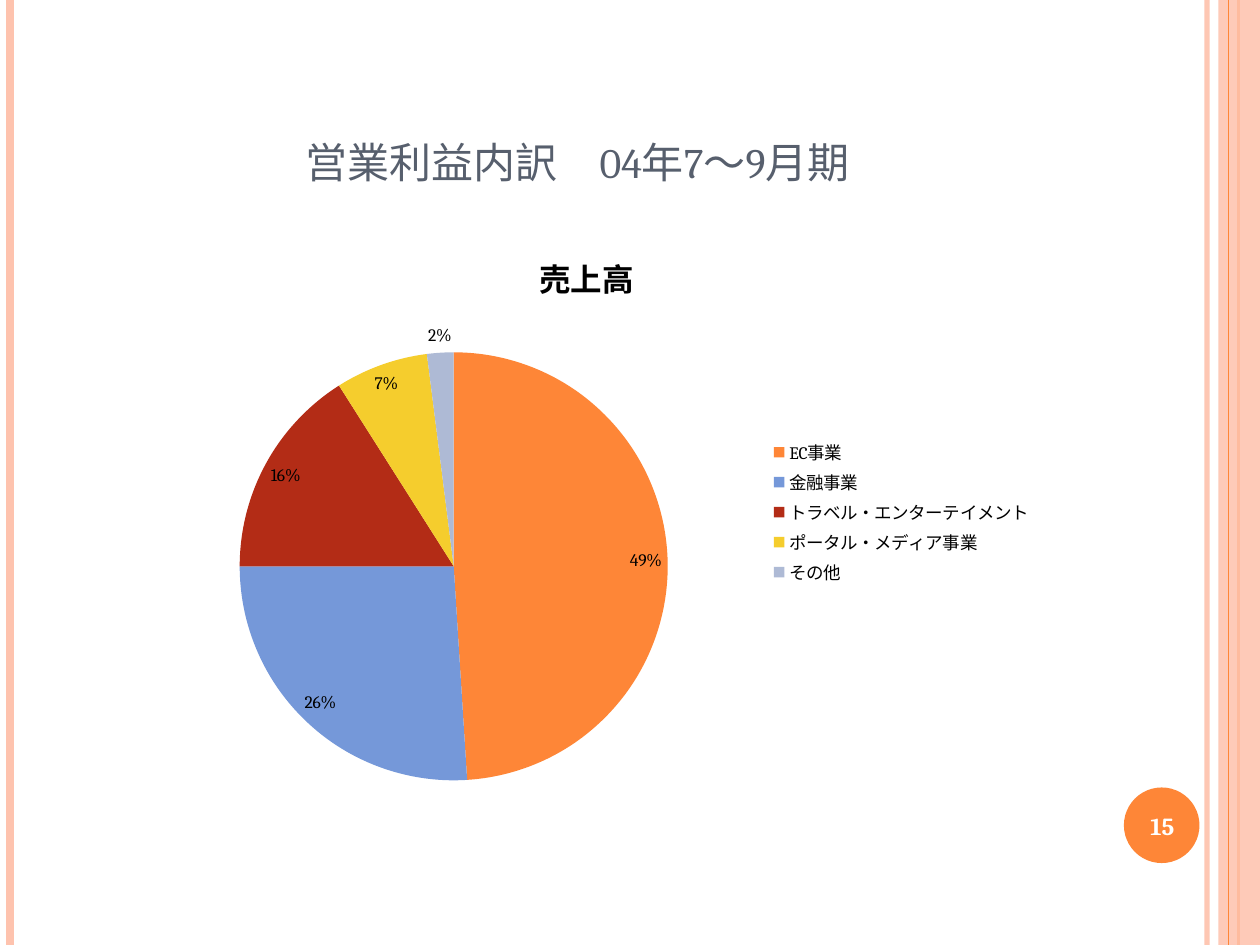
from lxml.etree import SubElement
from pptx import Presentation
from pptx.chart.data import CategoryChartData
from pptx.dml.color import RGBColor
from pptx.enum.chart import XL_CHART_TYPE, XL_LABEL_POSITION, XL_LEGEND_POSITION
from pptx.enum.shapes import MSO_CONNECTOR, MSO_SHAPE
from pptx.enum.text import MSO_ANCHOR, PP_ALIGN
from pptx.oxml import parse_xml
from pptx.oxml.ns import nsdecls, qn
from pptx.util import Inches, Pt

W, H = 10, 7.5
FONT = "Cambria"
COLORS = {"peach": "FEC3AE", "orange": "FE8637", "slate": "575F6D",
          "white": "FFFFFF", "black": "000000"}
SHARES = [
    ("EC事業", 0.49, "FE8637"),
    ("金融事業", 0.26, "7598D9"),
    ("トラベル・エンターテイメント", 0.16, "B32C16"),
    ("ポータル・メディア事業", 0.07, "F5CD2D"),
    ("その他", 0.02, "AEBAD5"),
]


def rgb(name):
    return RGBColor.from_string(COLORS[name])


def set_font(font, size, color, bold=False):
    font.name, font.size, font.bold = FONT, Pt(size), bold
    font.color.rgb = rgb(color)


def set_alpha(fill_parent, percent):
    color = fill_parent.find(qn("a:solidFill"))[0]
    SubElement(color, qn("a:alpha")).set("val", str(percent * 1000))


def add_stripe(s, x, color, width, alpha=100):
    """Draw a vertical line over the full slide height."""
    line = s.shapes.add_connector(MSO_CONNECTOR.STRAIGHT, Inches(x), 0, Inches(x), Inches(H))
    line.line.color.rgb = rgb(color)
    line.line.width = Pt(width)
    pr = line._element.spPr
    if alpha < 100:
        set_alpha(pr.find(qn("a:ln")), alpha)
    SubElement(pr, qn("a:effectLst"))


def add_filled(s, kind, box, color, alpha=100):
    sp = s.shapes.add_shape(kind, *map(Inches, box))
    sp.shadow.inherit = False
    sp.fill.solid()
    sp.fill.fore_color.rgb = rgb(color)
    sp.line.fill.background()
    if alpha < 100:
        set_alpha(sp._element.spPr, alpha)


def write_text(sp, text, size, color, anchor, bold=False):
    tf = sp.text_frame
    tf.word_wrap = True
    tf.vertical_anchor = anchor
    p = tf.paragraphs[0]
    p.alignment = PP_ALIGN.CENTER
    r = p.add_run()
    r.text = text
    set_font(r.font, size, color, bold)
    return r


def add_title(s, text):
    sp = s.shapes.title
    sp.left, sp.top, sp.width, sp.height = map(Inches, (0.5, 0.3, 8.17, 1.25))
    r = write_text(sp, text, 30, "slate", MSO_ANCHOR.BOTTOM)
    r.font._element.set("cap", "small")


def add_page_number(s, number):
    add_filled(s, MSO_SHAPE.OVAL, (8.92, 6.25, 0.6, 0.6), "orange")
    sp = s.shapes.add_textbox(*map(Inches, (8.89, 6.27, 0.67, 0.57)))
    write_text(sp, number, 14, "white", MSO_ANCHOR.MIDDLE, bold=True)


def place_plot(chart, x, y, w, h):
    """Fix the inner plot area, in shares of the chart's size."""
    plot_area = chart._chartSpace.chart.plotArea
    for old in plot_area.findall(qn("c:layout")):
        plot_area.remove(old)
    sizes = "".join(f'<c:{tag} val="{val}"/>' for tag, val in zip("xywh", (x, y, w, h)))
    plot_area.insert(0, parse_xml(
        f'<c:layout {nsdecls("c")}><c:manualLayout><c:layoutTarget val="inner"/>'
        f'<c:xMode val="edge"/><c:yMode val="edge"/>{sizes}</c:manualLayout></c:layout>'))


def add_pie(s, name, box):
    data = CategoryChartData(number_format="0%")
    data.categories = [label for label, _, _ in SHARES]
    data.add_series(name, [value for _, value, _ in SHARES])
    chart = s.shapes.add_chart(XL_CHART_TYPE.PIE, *map(Inches, box), data).chart
    set_font(chart.font, 10, "black")

    chart.has_title = True
    r = chart.chart_title.text_frame.paragraphs[0].add_run()
    r.text = name
    set_font(r.font, 18, "black", bold=True)
    chart.chart_title.include_in_layout = False

    chart.has_legend = True
    chart.legend.position = XL_LEGEND_POSITION.RIGHT
    chart.legend.include_in_layout = False

    plot = chart.plots[0]
    plot.vary_by_categories = True
    for i, (_, _, color) in enumerate(SHARES):
        fill = plot.series[0].points[i].format.fill
        fill.solid()
        fill.fore_color.rgb = RGBColor.from_string(color)
    plot.has_data_labels = True
    labels = plot.data_labels
    labels.show_value, labels.show_percentage = True, False
    labels.number_format, labels.number_format_is_linked = "0%", False
    labels.position = XL_LABEL_POSITION.BEST_FIT
    set_font(labels.font, 10, "black")
    place_plot(chart, 0.12, 0.22, 0.47, 0.75)


def main():
    prs = Presentation()
    prs.slide_width, prs.slide_height = Inches(W), Inches(H)
    s = prs.slides.add_slide(prs.slide_layouts[5])
    add_stripe(s, 9.58, "peach", 3, alpha=93)
    add_stripe(s, 0.08, "peach", 4.5)
    add_stripe(s, 9.83, "orange", 1.5)
    add_filled(s, MSO_SHAPE.RECTANGLE, (9.67, 0, 0.33, H), "peach", alpha=87)
    add_stripe(s, 9.75, "orange", 0.75)
    add_title(s, "営業利益内訳　04年7～9月期")
    add_page_number(s, "15")
    add_pie(s, "売上高", (1.02, 1.8, 7.27, 4.53))
    prs.save("out.pptx")


if __name__ == "__main__":
    main()
